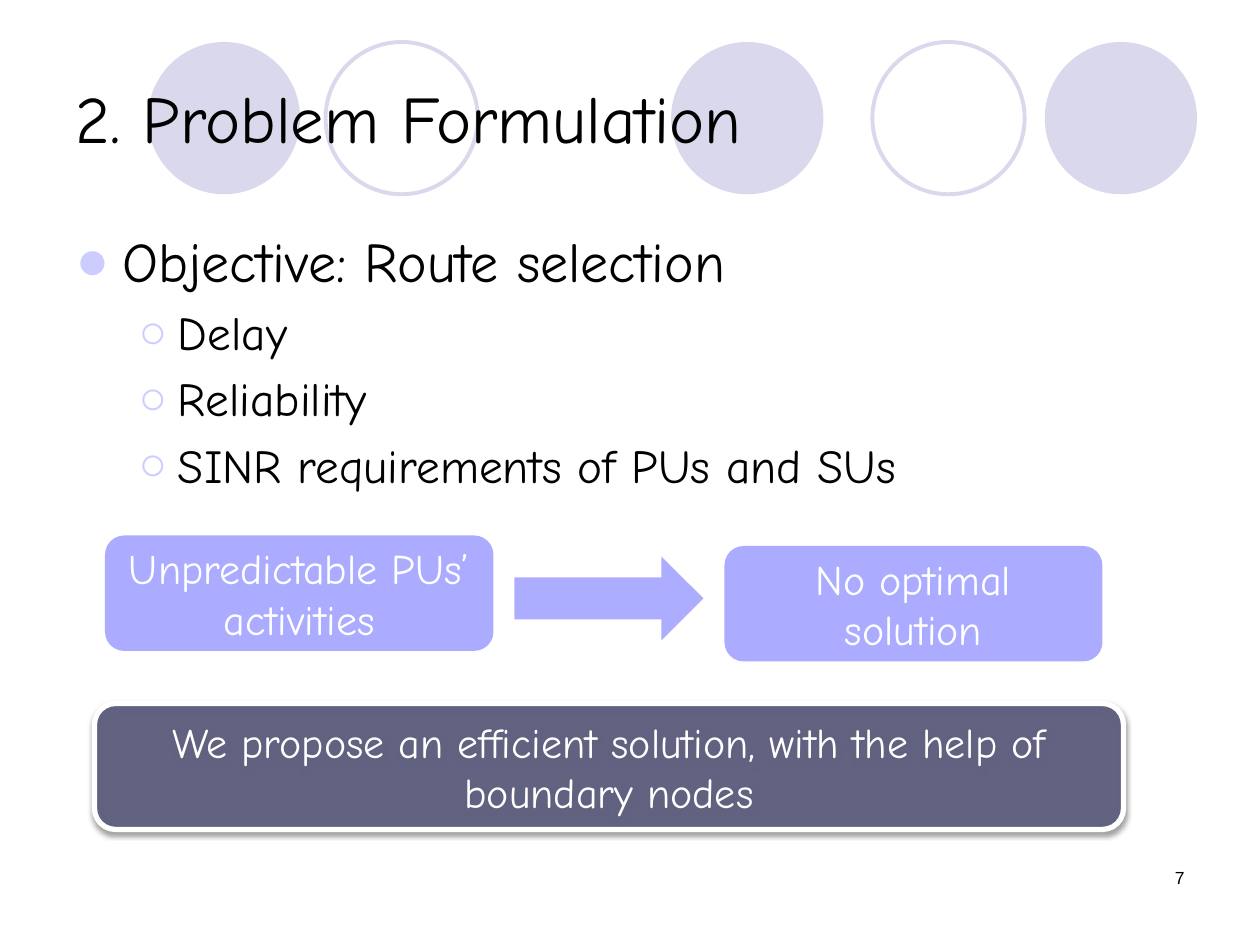
from lxml import etree
from pptx import Presentation
from pptx.dml.color import RGBColor
from pptx.enum.shapes import MSO_SHAPE
from pptx.enum.text import MSO_ANCHOR, PP_ALIGN
from pptx.oxml import parse_xml
from pptx.oxml.ns import qn
from pptx.util import Pt

OVAL, ROUND, ARROW = MSO_SHAPE.OVAL, MSO_SHAPE.ROUNDED_RECTANGLE, MSO_SHAPE.RIGHT_ARROW
LEFT, MID, RIGHT = PP_ALIGN.LEFT, PP_ALIGN.CENTER, PP_ALIGN.RIGHT
CENTRE, TOP = MSO_ANCHOR.MIDDLE, MSO_ANCHOR.TOP
HAND, PLAIN = "Comic Neue", "Arial"
NS = "http://schemas.openxmlformats.org/drawingml/2006/main"
HUES = {"ring": "D9D8EC", "mark": "CCCCFF", "text": "000000",
        "card": "6A6AFF", "dark": "545479", "white": "FFFFFF"}


def hue(name):
    """Return the named colour."""
    return RGBColor.from_string(HUES[name])


def style(par, size, color="text", face=HAND, align=LEFT):
    """Set the font and alignment of a paragraph."""
    par.alignment = align
    par.font.name, par.font.size = face, Pt(size)
    par.font.color.rgb = hue(color)


def place(shape, box):
    """Move a shape to a box given in points."""
    shape.left, shape.top, shape.width, shape.height = map(Pt, box)


def draw(slide, kind, box, fill=None, alpha=100, line=None, width=0):
    """Add a preset shape with its fill and outline."""
    shape = slide.shapes.add_shape(kind, *map(Pt, box))
    shape.shadow.inherit = False
    if fill:
        shape.fill.solid()
        shape.fill.fore_color.rgb = hue(fill)
        tint = shape.fill._xPr.find(".//" + qn("a:srgbClr"))
        etree.SubElement(tint, qn("a:alpha"), val=str(alpha * 1000))
    else:
        shape.fill.background()
    if line:
        shape.line.color.rgb = hue(line)
        shape.line.width = Pt(width)
    else:
        shape.line.fill.background()
    return shape


def label(shape, text):
    """Write centred white text in a shape."""
    frame = shape.text_frame
    frame.word_wrap, frame.vertical_anchor = True, CENTRE
    frame.text = text
    style(frame.paragraphs[0], 24, "white", align=MID)


def shade(shape):
    """Give a shape a soft shadow below it."""
    old = shape._element.spPr.find(qn("a:effectLst"))
    new = parse_xml(
        f'<a:effectLst xmlns:a="{NS}"><a:outerShdw blurRad="{Pt(3.1)}" dist="{Pt(1.6)}" '
        'dir="5400000" rotWithShape="0"><a:srgbClr val="000000">'
        '<a:alpha val="38000"/></a:srgbClr></a:outerShdw></a:effectLst>')
    old.getparent().replace(old, new)


def rings(slide, box):
    """Draw the row of full and hollow circles."""
    left, top, _, size = box
    for shift, full in ((0, True), (101.5, False), (299, True), (414, False), (512.5, True)):
        spot = (left + shift, top, size, size)
        if full:
            draw(slide, OVAL, spot, "ring")
        else:
            draw(slide, OVAL, spot, line="ring", width=2.25)


def head(slide, box):
    """Fill the title placeholder."""
    title = slide.shapes.title
    place(title, box)
    title.text_frame.text = "2. Problem Formulation"
    title.text_frame.vertical_anchor = CENTRE
    style(title.text_frame.paragraphs[0], 38)


def bullet(par, mark, left, hang):
    """Set the bullet and hanging indent of a paragraph."""
    props = par._p.get_or_add_pPr()
    props.set("marL", str(Pt(left)))
    props.set("indent", str(Pt(-hang)))
    tint = etree.SubElement(props, qn("a:buClr"))
    etree.SubElement(tint, qn("a:srgbClr"), val=HUES["mark"])
    etree.SubElement(props, qn("a:buFont"), typeface=PLAIN)
    etree.SubElement(props, qn("a:buChar"), char=mark)


def goals(slide, box):
    """Fill the body placeholder with the goal and its parts."""
    body = slide.placeholders[1]
    place(body, box)
    frame = body.text_frame
    frame.vertical_anchor = TOP
    frame.text = "Objective: Route selection\nDelay\nReliability\nSINR requirements of PUs and SUs"
    for rank, par in enumerate(frame.paragraphs):
        par.level = min(rank, 1)
        par.space_before = Pt(5.4 * par.level)
        bullet(par, *(("○", 58.5, 22.5) if rank else ("●", 27, 27)))
        style(par, 27 if rank else 32)


def flow(slide, box):
    """Draw the cause, the arrow and the result."""
    left, top, wide, high = box
    cause = draw(slide, ROUND, (left, top, 222, high - 6), "card", 56)
    label(cause, "Unpredictable PUs’ activities")
    draw(slide, ARROW, (left + 234, top + 12, 108, 48), "card", 55)
    result = draw(slide, ROUND, (left + wide - 216, top + 6, 216, high - 6), "card", 56)
    label(result, "No optimal solution")


def claim(slide, box):
    """Draw the closing banner."""
    banner = draw(slide, ROUND, box, "dark", 84, "white", 3)
    shade(banner)
    label(banner, "We propose an efficient solution, with the help of boundary nodes")


def number(slide, box):
    """Write the page number."""
    frame = slide.shapes.add_textbox(*map(Pt, box)).text_frame
    frame.word_wrap = True
    frame.text = "7"
    style(frame.paragraphs[0], 10, face=PLAIN, align=RIGHT)


def main():
    """Build and save the slide."""
    deck = Presentation()
    deck.slide_width, deck.slide_height = Pt(720), Pt(540)
    slide = deck.slides.add_slide(deck.slide_layouts[1])
    rings(slide, (84.5, 24, 600, 87))
    for ring in list(slide.shapes)[:1:-1]:
        slide.shapes._spTree.insert(2, ring._element)
    head(slide, (36, 21.6, 648, 90))
    goals(slide, (36, 126, 648, 356.4))
    number(slide, (516, 492, 168, 36))
    flow(slide, (60, 306, 570, 72))
    claim(slide, (54, 402, 588, 72))
    deck.save("out.pptx")


if __name__ == "__main__":
    main()
